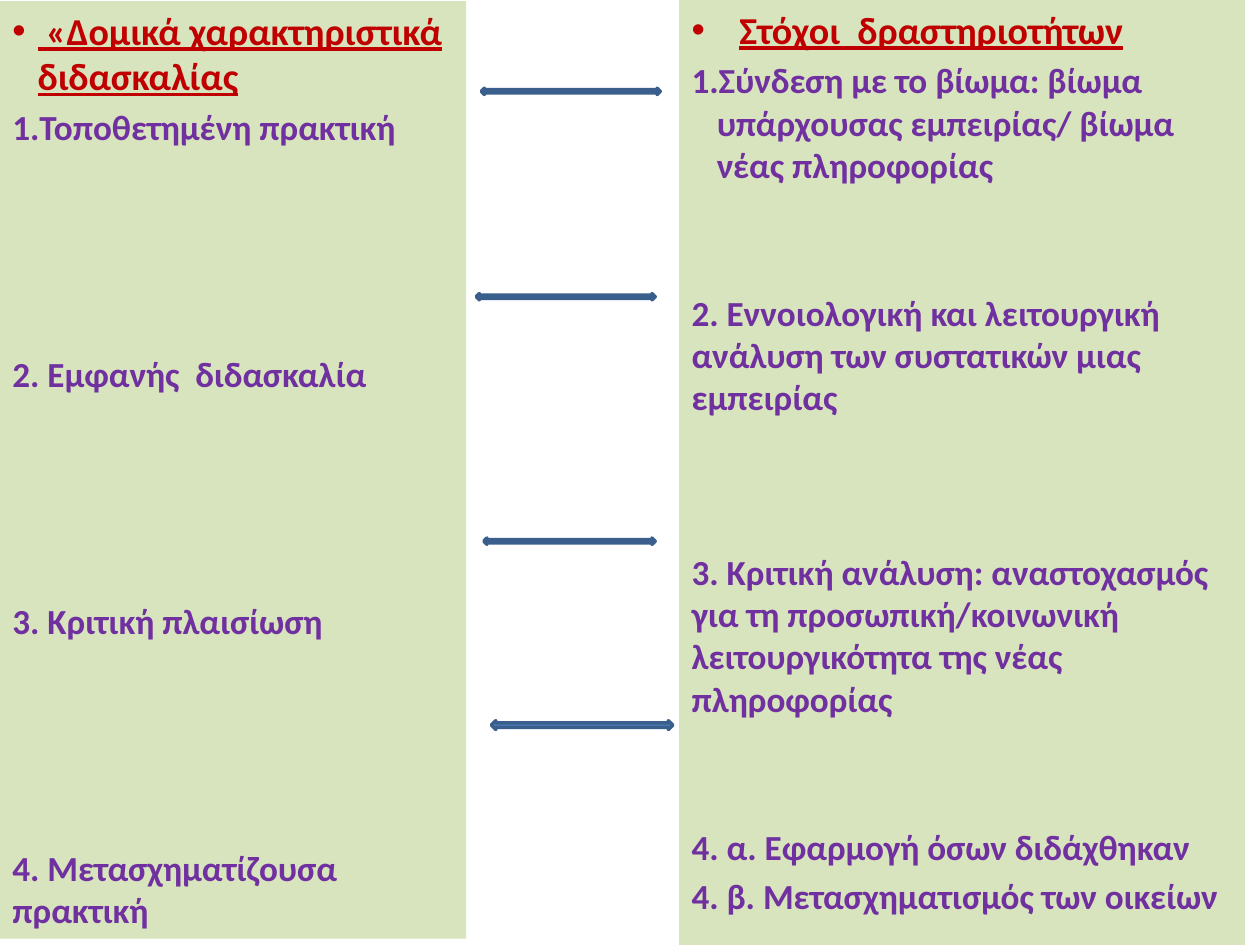
from lxml import etree
from pptx import Presentation
from pptx.dml.color import RGBColor
from pptx.enum.shapes import MSO_SHAPE
from pptx.enum.text import MSO_ANCHOR, PP_ALIGN
from pptx.oxml.ns import qn
from pptx.util import Inches, Pt

RECTANGLE = MSO_SHAPE.RECTANGLE
DOUBLE_ARROW = MSO_SHAPE.LEFT_RIGHT_ARROW
TOP = MSO_ANCHOR.TOP
LEFT = PP_ALIGN.LEFT

COLORS = {"panel": "D7E4BD", "heading": "C00000", "item": "7030A0",
          "arrow": "4F81BD", "arrow_line": "3A5F8C"}
FONT = "Calibri"
HEADING_SIZE, ITEM_SIZE = 21.7, 20.1
NARROW_GAP, MEDIUM_GAP, GAP, WIDE_GAP = 4, 60.5, 75.7, 117  # points before an item

# Each panel: place, heading with its indent, indent of item 1, items with space before
PANELS = [
    {"place": (0, 0.01, 3.7, 7.44),
     "heading": " «Δομικά χαρακτηριστικά διδασκαλίας", "heading_indent": 0.2,
     "number_indent": 0,
     "items": [("Τοποθετημένη πρακτική", NARROW_GAP),
               ("2. Εμφανής  διδασκαλία", WIDE_GAP),
               ("3. Kριτική πλαισίωση", WIDE_GAP),
               ("4. Μετασχηματίζουσα πρακτική", WIDE_GAP)]},
    {"place": (5.39, 0, 4.49, 7.5),
     "heading": "Στόχοι  δραστηριοτήτων", "heading_indent": 0.38,
     "number_indent": 0.2,
     "items": [("Σύνδεση με το βίωμα: βίωμα υπάρχουσας εμπειρίας/ βίωμα νέας "
                "πληροφορίας", NARROW_GAP),
               ("2. Εννοιολογική και λειτουργική ανάλυση των συστατικών μιας "
                "εμπειρίας", MEDIUM_GAP),
               ("3. Κριτική ανάλυση: αναστοχασμός για τη προσωπική/κοινωνική "
                "λειτουργικότητα της νέας πληροφορίας", GAP),
               ("4. α. Εφαρμογή όσων διδάχθηκαν", MEDIUM_GAP),
               ("4. β. Μετασχηματισμός των οικείων", NARROW_GAP)]},
]
ARROWS = [(3.82, 0.7, 1.42, 0.05), (3.78, 2.33, 1.42, 0.05),
          (3.84, 4.27, 1.36, 0.05), (3.9, 5.72, 1.44, 0.07)]


def color(name):
    return RGBColor.from_string(COLORS[name])


def add_filled_shape(page, kind, place, fill):
    shape = page.shapes.add_shape(kind, *map(Inches, place))
    shape.shadow.inherit = False
    shape.fill.solid()
    shape.fill.fore_color.rgb = color(fill)
    return shape


def add_marker(para, indent, tag, **attributes):
    properties = para._p.get_or_add_pPr()
    properties.set("marL", str(Inches(indent)))
    properties.set("indent", str(-Inches(indent)))
    if tag == "a:buChar":
        etree.SubElement(properties, qn("a:buFont"), typeface="Arial")
    etree.SubElement(properties, qn(tag), **attributes)


def style(para, text, size, color_name):
    para.text = text
    para.alignment = LEFT
    para.font.name = FONT
    para.font.size = Pt(size)
    para.font.bold = True
    para.font.color.rgb = color(color_name)


def add_panel(page, panel):
    box = add_filled_shape(page, RECTANGLE, panel["place"], "panel")
    box.line.fill.background()
    frame = box.text_frame
    frame.word_wrap = True
    frame.vertical_anchor = TOP

    heading = frame.paragraphs[0]
    add_marker(heading, panel["heading_indent"], "a:buChar", char="•")
    style(heading, panel["heading"], HEADING_SIZE, "heading")
    heading.font.underline = True

    for index, (text, gap) in enumerate(panel["items"]):
        para = frame.add_paragraph()
        if index == 0:
            add_marker(para, panel["number_indent"], "a:buAutoNum",
                       type="arabicPeriod")
        style(para, text, ITEM_SIZE, "item")
        para.space_before = Pt(gap)


deck = Presentation()
deck.slide_width, deck.slide_height = Inches(10), Inches(7.5)
page = deck.slides.add_slide(deck.slide_layouts[6])

# Text panels
for panel in PANELS:
    add_panel(page, panel)

# Arrows between the panels
for place in ARROWS:
    arrow = add_filled_shape(page, DOUBLE_ARROW, place, "arrow")
    arrow.line.color.rgb = color("arrow_line")
    arrow.line.width = Pt(2)

deck.save("out.pptx")
